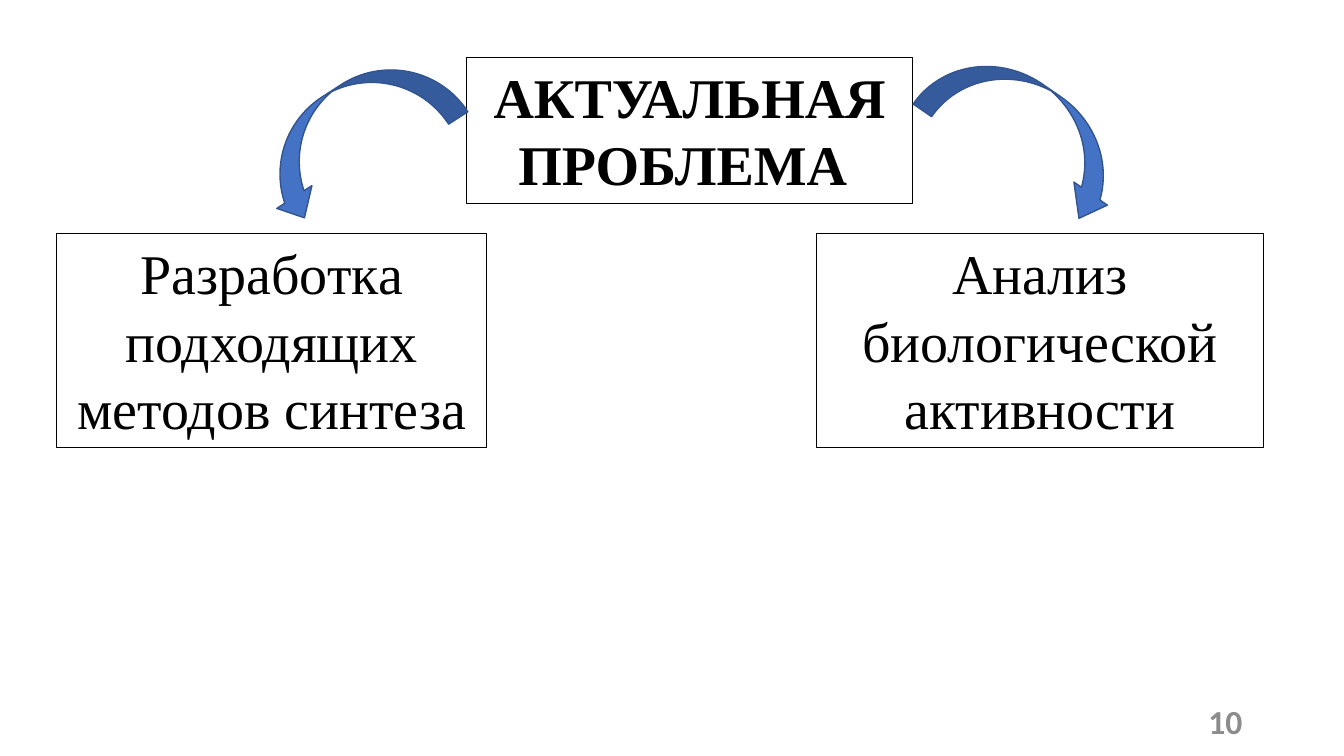
from pptx import Presentation
from pptx.dml.color import RGBColor
from pptx.enum.shapes import MSO_SHAPE as Shape
from pptx.enum.text import MSO_ANCHOR as Anchor, MSO_AUTO_SIZE as AutoSize, PP_ALIGN as Align
from pptx.util import Inches, Pt

COLORS = {"ink": "000000", "arrow": "4472C4", "arrow_edge": "325491", "number": "8C8C8C"}
SERIF, SANS = "Times New Roman", "Calibri"

# text, bold, (left, top, width, height)
PROBLEM_BOXES = [
    ("АКТУАЛЬНАЯ ПРОБЛЕМА ", True, (4.63, 0.57, 4.42, 1.45)),
    ("Разработка подходящих методов синтеза", False, (0.56, 2.32, 4.27, 2.12)),
    ("Анализ биологической активности", False, (8.1, 2.32, 4.43, 2.12)),
]
# preset, rotation, adjustments, (left, top, width, height)
ARROWS = [
    (Shape.CURVED_LEFT_ARROW, 304.6, (0.25, 0.453, 0.301), (9.77, 0.19, 0.89, 2.2)),
    (Shape.CURVED_RIGHT_ARROW, 57, (0.25, 0.456, 0.25), (3.04, 0.24, 0.91, 2.14)),
]
PAGE_NUMBER = "10"
PAGE_NUMBER_PLACE = (9.42, 6.95, 3, 0.4)


def color(name):
    return RGBColor.from_string(COLORS[name])


def add_text(slide, text, place, font_name, size, bold, ink, align):
    box = slide.shapes.add_textbox(*map(Inches, place))
    box.text_frame.word_wrap = True
    paragraph = box.text_frame.paragraphs[0]
    paragraph.alignment = align
    run = paragraph.add_run()
    run.text = text
    run.font.name = font_name
    run.font.size = Pt(size)
    run.font.bold = bold
    run.font.color.rgb = color(ink)
    return box


def add_arrow(slide, preset, rotation, adjustments, place):
    arrow = slide.shapes.add_shape(preset, *map(Inches, place))
    arrow.rotation = rotation
    for index, value in enumerate(adjustments):
        arrow.adjustments[index] = value
    arrow.shadow.inherit = False
    arrow.fill.solid()
    arrow.fill.fore_color.rgb = color("arrow")
    arrow.line.color.rgb = color("arrow_edge")
    arrow.line.width = Pt(1)


def main():
    deck = Presentation()
    deck.slide_width, deck.slide_height = Inches(13.33), Inches(7.5)
    slide = deck.slides.add_slide(deck.slide_layouts[6])

    for text, bold, place in PROBLEM_BOXES:
        box = add_text(slide, text, place, SERIF, 40, bold, "ink", Align.CENTER)
        box.text_frame.auto_size = AutoSize.SHAPE_TO_FIT_TEXT
        box.line.color.rgb = color("ink")
        box.line.width = Pt(0.75)

    for arrow in ARROWS:
        add_arrow(slide, *arrow)

    number = add_text(slide, PAGE_NUMBER, PAGE_NUMBER_PLACE, SANS, 24, True, "number", Align.RIGHT)
    number.text_frame.vertical_anchor = Anchor.MIDDLE

    deck.save("out.pptx")


if __name__ == "__main__":
    main()
